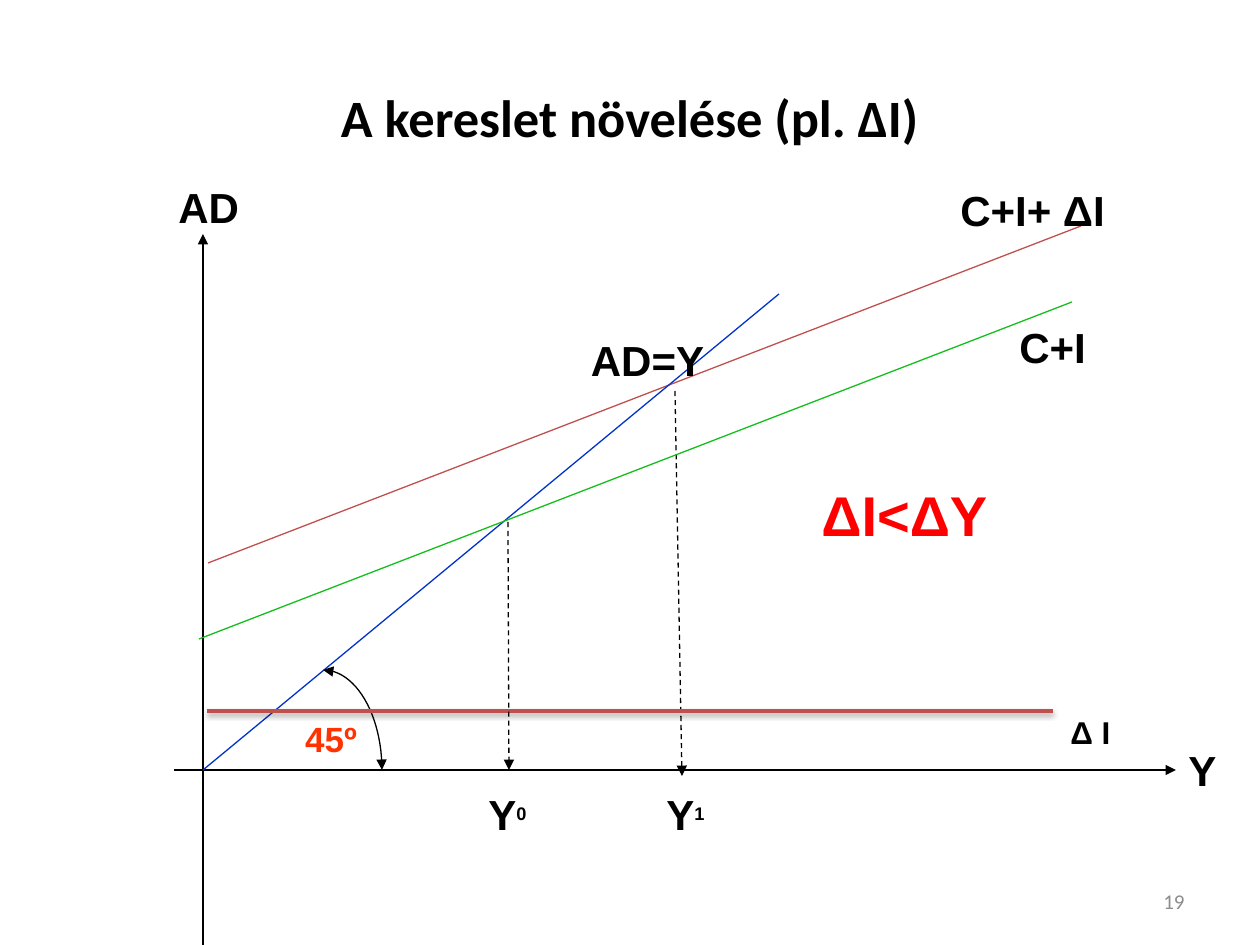
from dataclasses import dataclass
from math import cos, pi, sin

from lxml.etree import SubElement
from pptx import Presentation
from pptx.dml.color import RGBColor
from pptx.enum.dml import MSO_LINE
from pptx.enum.shapes import MSO_CONNECTOR
from pptx.enum.text import MSO_ANCHOR, PP_ALIGN
from pptx.oxml.ns import qn
from pptx.util import Pt

SCALE = 914400 / 126


@dataclass(frozen=True)
class Theme:
    """Fonts, colours and type sizes of the slide."""
    head: str = "Calibri"
    body: str = "Arial"
    ink: str = "000000"
    grey: str = "8C8C8C"
    brick: str = "C0504D"
    green: str = "15BD1D"
    blue: str = "0033CC"
    orange: str = "FF3300"
    red: str = "FF0000"
    title: int = 30
    large: int = 32
    label: int = 24
    angle: int = 20
    small: int = 18
    page: int = 12
    thin: float = 0.75
    thick: float = 2


THEME = Theme()


def px(size):
    """Turn pixels into EMU."""
    return round(size * SCALE)


def style(run, size, color, font, bold):
    """Format one run."""
    run.font.size = Pt(size)
    run.font.name = font
    run.font.bold = bold
    run.font.color.rgb = RGBColor.from_string(color)


def add_text(slide, box, text, size=THEME.label, color=THEME.ink, font=THEME.body,
             bold=True, align=PP_ALIGN.LEFT, anchor=MSO_ANCHOR.TOP):
    """Add a text box and return its paragraph."""
    frame = slide.shapes.add_textbox(*map(px, box)).text_frame
    frame.word_wrap = True
    frame.vertical_anchor = anchor
    para = frame.paragraphs[0]
    para.text = text
    para.alignment = align
    style(para.runs[0], size, color, font, bold)
    return para


def add_level(slide, left, index):
    """Add an income label with a raised index."""
    para = add_text(slide, (left, 782, 105, 63), "Y", align=PP_ALIGN.CENTER)
    run = para.add_run()
    run.text = index
    style(run, THEME.small, THEME.ink, THEME.body, True)
    run.font._element.set("baseline", "30000")


def add_tips(shape, *ends):
    """Put arrowheads on the named ends of a line."""
    edge = shape.line._get_or_add_ln()
    for end in ends:
        SubElement(edge, qn(f"a:{end}"), type="triangle")


def add_line(slide, start, stop, color=THEME.ink, width=THEME.thin, dash=False, tip=False):
    """Add a straight line without a shadow."""
    line = slide.shapes.add_connector(MSO_CONNECTOR.STRAIGHT, *map(px, start + stop))
    line.line.color.rgb = RGBColor.from_string(color)
    line.line.width = Pt(width)
    if dash:
        line.line.dash_style = MSO_LINE.DASH
    if tip:
        add_tips(line, "tailEnd")
    SubElement(line._element.spPr, qn("a:effectLst"))
    return line


def add_shade(line):
    """Cast a soft shadow below a line."""
    effects = line._element.spPr.find(qn("a:effectLst"))
    shade = SubElement(effects, qn("a:outerShdw"), blurRad="40000", dist="20000",
                       dir="5400000", rotWithShape="0")
    color = SubElement(shade, qn("a:srgbClr"), val=THEME.ink)
    SubElement(color, qn("a:alpha"), val="38000")


def add_arc(slide, center, wide, high, steps=24):
    """Add a quarter arc with two arrowheads."""
    left, base = center
    turns = [pi / 2 * step / steps for step in range(steps + 1)]
    points = [(px(left + wide * sin(turn)), px(base - high * cos(turn))) for turn in turns]
    pen = slide.shapes.build_freeform(*points[0])
    pen.add_line_segments(points[1:], close=False)
    arc = pen.convert_to_shape()
    arc.fill.background()
    arc.line.color.rgb = RGBColor.from_string(THEME.ink)
    arc.line.width = Pt(THEME.thin)
    arc.shadow.inherit = False
    add_tips(arc, "headEnd", "tailEnd")


def add_graph(slide):
    """Draw the axes, the demand lines and the drop lines."""
    add_line(slide, (203, 945), (203, 234), tip=True)
    add_line(slide, (174, 770), (1176, 770), tip=True)
    add_line(slide, (208, 563), (1081, 226), THEME.brick)
    add_line(slide, (203, 770), (779, 294), THEME.blue)
    add_line(slide, (675, 391), (682, 776), dash=True, tip=True)
    add_line(slide, (199, 639), (1072, 302), THEME.green)
    add_arc(slide, (323, 770), 59, 100)
    add_shade(add_line(slide, (207, 711), (1053, 711), THEME.brick, THEME.thick))
    add_line(slide, (508, 522), (509, 770), dash=True, tip=True)


def add_labels(slide):
    """Write the labels of the graph."""
    add_text(slide, (1007, 315, 203, 63), "C+I")
    add_text(slide, (1176, 738, 79, 63), "Y")
    add_text(slide, (166, 175, 116, 63), "AD")
    add_text(slide, (553, 328, 189, 63), "AD=Y", align=PP_ALIGN.CENTER)
    add_text(slide, (948, 178, 249, 63), "C+I+ ΔI")
    add_text(slide, (272, 711, 118, 54), "45º", THEME.angle, THEME.orange,
             align=PP_ALIGN.CENTER)
    add_text(slide, (1058, 707, 105, 50), "Δ I", THEME.small)
    add_text(slide, (809, 474, 379, 118), "ΔI<ΔY", THEME.large, THEME.red)
    add_level(slide, 455, "0")
    add_level(slide, 633, "1")


def main():
    """Build and save the slide."""
    deck = Presentation()
    deck.slide_width, deck.slide_height = px(1260), px(945)
    slide = deck.slides.add_slide(deck.slide_layouts[6])
    add_text(slide, (63, 38, 1134, 157), "A kereslet növelése (pl. ΔI)", THEME.title,
             font=THEME.head, align=PP_ALIGN.CENTER, anchor=MSO_ANCHOR.MIDDLE)
    add_graph(slide)
    add_labels(slide)
    add_text(slide, (903, 876, 294, 50), "19", THEME.page, THEME.grey, THEME.head,
             False, PP_ALIGN.RIGHT, MSO_ANCHOR.MIDDLE)
    deck.save("out.pptx")


if __name__ == "__main__":
    main()
